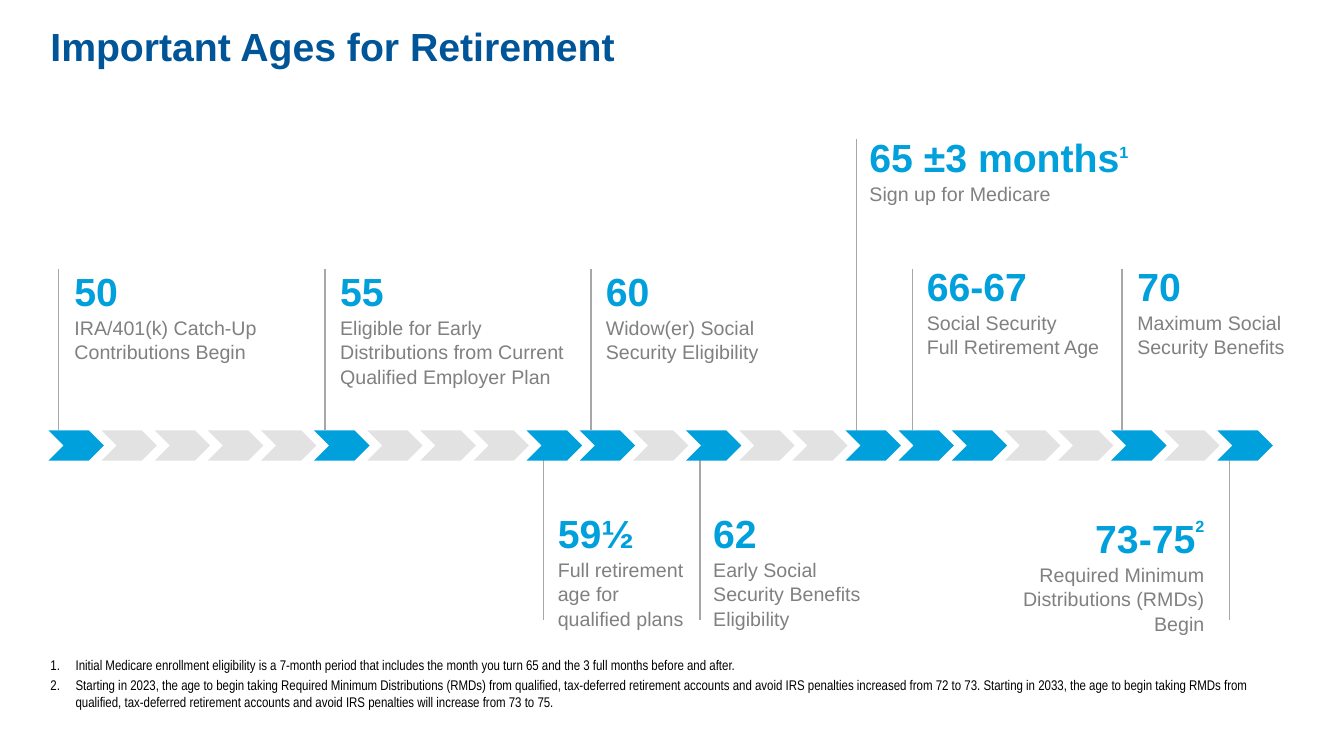
from dataclasses import dataclass

from lxml import etree
from pptx import Presentation
from pptx.dml.color import RGBColor
from pptx.enum.shapes import MSO_CONNECTOR, MSO_SHAPE
from pptx.enum.text import MSO_ANCHOR, MSO_AUTO_SIZE, PP_ALIGN
from pptx.oxml.ns import qn
from pptx.util import Inches, Pt

STRAIGHT = MSO_CONNECTOR.STRAIGHT
CHEVRON = MSO_SHAPE.CHEVRON
LEFT, RIGHT = PP_ALIGN.LEFT, PP_ALIGN.RIGHT
TOP, BOTTOM = MSO_ANCHOR.TOP, MSO_ANCHOR.BOTTOM

NAVY = RGBColor(0x00, 0x55, 0x98)
BLUE = RGBColor(0x00, 0xA0, 0xDC)
GRAY = RGBColor(0x80, 0x80, 0x80)
LINE_GRAY = RGBColor(0xA7, 0xA7, 0xA7)
PALE_GRAY = RGBColor(0xE2, 0xE2, 0xE2)
BLACK = RGBColor(0, 0, 0)

# Timeline grid: one column per year of age, in inches
FIRST_AGE, LAST_AGE = 50, 72
GRID_LEFT, COLUMN = 0.48, 0.527
CHEVRON_WIDTH, CHEVRON_HEIGHT = 0.55, 0.3
TIMELINE_TOP = 4.27
TIMELINE_BOTTOM = TIMELINE_TOP + CHEVRON_HEIGHT - 0.02
STEM = 1.6
TEXT_HEIGHT = 1.3
UPPER_ROW, LOWER_ROW, MEDICARE_ROW = 2.58, 5.03, 1.25
HIGHLIGHTED_AGES = {50, 55, 59, 60, 62, 65, 66, 67, 70, 72}
LINE_SPACING = 1.05


@dataclass
class Milestone:
    age: int        # column that the stem belongs to
    nudge: float    # stem offset inside the column
    gap: float      # from the stem to the text box
    width: float
    heading: str
    detail: str
    row: float = UPPER_ROW
    margin: float = 0.1
    note: str = ""
    raised: int = 0
    align: int = LEFT


MILESTONES = [
    Milestone(50, 0.1, 0.06, 2.55, "50", "IRA/401(k) Catch-Up Contributions Begin"),
    Milestone(55, 0.11, 0.05, 2.66, "55",
              "Eligible for Early Distributions from Current Qualified Employer Plan"),
    Milestone(59, 0.17, 0.14, 1.34, "59½", "Full retirement age for qualified plans",
              LOWER_ROW, 0),
    Milestone(60, 0.11, 0.05, 1.95, "60", "Widow(er) Social Security Eligibility"),
    Milestone(62, 0.14, 0.13, 1.56, "62", "Early Social Security Benefits Eligibility",
              LOWER_ROW, 0),
    Milestone(65, 0.11, 0.03, 2.95, "65 ±3 months", "Sign up for Medicare",
              MEDICARE_ROW, note="1", raised=50),
    Milestone(66, 0.14, 0.14, 1.79, "66-67", "Social Security\vFull Retirement Age",
              margin=0),
    Milestone(70, 0.11, 0.15, 1.7, "70", "Maximum Social Security Benefits", margin=0),
    Milestone(72, 0.12, -2.28, 2.13, "73-75",
              "Required Minimum Distributions (RMDs) Begin",
              LOWER_ROW, note="2", raised=75, align=RIGHT),
]

FOOTNOTES = [
    "Initial Medicare enrollment eligibility is a 7-month period that includes the "
    "month you turn 65 and the 3 full months before and after.",
    "Starting in 2023, the age to begin taking Required Minimum Distributions (RMDs) "
    "from qualified, tax-deferred retirement accounts and avoid IRS penalties "
    "increased from 72 to 73. Starting in 2033, the age to begin taking RMDs from "
    "qualified, tax-deferred retirement accounts and avoid IRS penalties will "
    "increase from 73 to 75.",
]


def column_left(age):
    return GRID_LEFT + COLUMN * (age - FIRST_AGE)


def format_paragraph(paragraph, size, color, bold=False, name="Arial", align=LEFT):
    paragraph.alignment = align
    paragraph.line_spacing = LINE_SPACING
    paragraph.space_before = Pt(0)
    font = paragraph.font
    font.name, font.size, font.bold = name, Pt(size), bold
    font.color.rgb = color


def set_frame(frame, anchor=TOP, side=0, edge=0):
    frame.word_wrap = True
    frame.auto_size = MSO_AUTO_SIZE.NONE
    frame.vertical_anchor = anchor
    frame.margin_left = frame.margin_right = Inches(side)
    frame.margin_top = frame.margin_bottom = Inches(edge)


def place(shape, left, top, width, height):
    shape.left, shape.top = Inches(left), Inches(top)
    shape.width, shape.height = Inches(width), Inches(height)


def add_title(slide, text):
    title = slide.shapes.title
    place(title, 0.5, 0.2, 9.5, 0.85)
    set_frame(title.text_frame)
    title.text_frame.text = text
    format_paragraph(title.text_frame.paragraphs[0], 28, NAVY, bold=True)


def add_footnotes(slide, notes):
    body = slide.placeholders[1]
    place(body, 0.5, 6.52, 12.33, 0.53)
    frame = body.text_frame
    set_frame(frame, BOTTOM)
    frame.text = "\n".join(notes)
    for paragraph in frame.paragraphs:
        properties = paragraph._p.get_or_add_pPr()
        properties.set("marL", str(Inches(0.25)))
        properties.set("indent", str(Inches(-0.25)))
        etree.SubElement(properties, qn("a:buFont"), typeface="+mj-lt")
        etree.SubElement(properties, qn("a:buAutoNum"), type="arabicPeriod")
        format_paragraph(paragraph, 10, BLACK, name="Arial Narrow")
        paragraph.space_after = Pt(1.5)


def add_stem(slide, x, start, end):
    stem = slide.shapes.add_connector(
        STRAIGHT, Inches(x), Inches(start), Inches(x), Inches(end))
    stem.line.color.rgb = LINE_GRAY
    stem.line.width = Pt(1)
    etree.SubElement(stem._element.spPr, qn("a:effectLst"))


def add_milestone(slide, milestone):
    x = column_left(milestone.age) + milestone.nudge
    if milestone.row == LOWER_ROW:
        add_stem(slide, x, TIMELINE_BOTTOM + STEM, TIMELINE_BOTTOM)
    elif milestone.row == MEDICARE_ROW:
        add_stem(slide, x, TIMELINE_TOP + 0.05, 1.38)
    else:
        add_stem(slide, x, TIMELINE_TOP, TIMELINE_TOP - STEM)

    box = slide.shapes.add_textbox(
        Inches(x + milestone.gap), Inches(milestone.row),
        Inches(milestone.width), Inches(TEXT_HEIGHT))
    frame = box.text_frame
    set_frame(frame, side=milestone.margin, edge=milestone.margin / 2)
    heading, detail = frame.paragraphs[0], frame.add_paragraph()
    heading.text, detail.text = milestone.heading, milestone.detail
    format_paragraph(heading, 28, BLUE, bold=True, align=milestone.align)
    format_paragraph(detail, 14, GRAY, align=milestone.align)
    if milestone.note:
        mark = heading.add_run()
        mark.text = milestone.note
        mark.font.size = Pt(20)
        mark.font._element.set("baseline", str(milestone.raised * 1000))


def add_chevron(slide, age):
    chevron = slide.shapes.add_shape(
        CHEVRON, Inches(column_left(age)), Inches(TIMELINE_TOP),
        Inches(CHEVRON_WIDTH), Inches(CHEVRON_HEIGHT))
    chevron.shadow.inherit = False
    chevron.fill.solid()
    chevron.fill.fore_color.rgb = BLUE if age in HIGHLIGHTED_AGES else PALE_GRAY
    chevron.line.fill.background()


def main():
    presentation = Presentation()
    presentation.slide_width = Inches(13.33)
    presentation.slide_height = Inches(7.5)
    slide = presentation.slides.add_slide(presentation.slide_layouts[1])

    add_title(slide, "Important Ages for Retirement")
    # Stems go first so that the chevrons cover their ends
    for milestone in MILESTONES:
        add_milestone(slide, milestone)
    for age in range(FIRST_AGE, LAST_AGE + 1):
        add_chevron(slide, age)
    add_footnotes(slide, FOOTNOTES)

    presentation.save("out.pptx")


if __name__ == "__main__":
    main()
